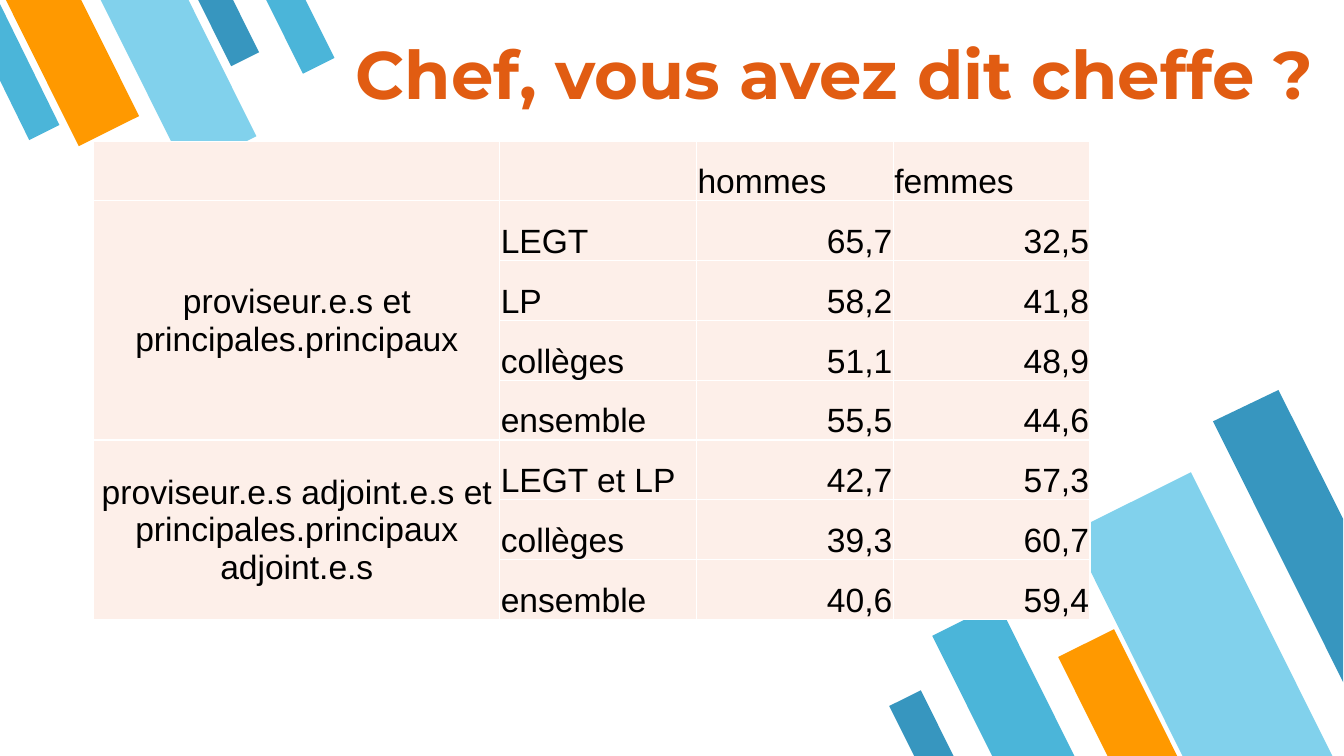
from dataclasses import dataclass

from lxml.etree import SubElement
from pptx import Presentation
from pptx.dml.color import RGBColor
from pptx.enum.shapes import MSO_SHAPE
from pptx.enum.text import MSO_ANCHOR, PP_ALIGN
from pptx.oxml import parse_xml
from pptx.oxml.ns import nsdecls, qn
from pptx.util import Pt

SKY, PALE, DEEP, GOLD = "4BB5D9", "81D1EC", "3796BF", "FF9900"
WHITE, BLACK, ROSE, RUST = "FFFFFF", "000000", "FDEFE9", "E15C12"
LOW, HIGH = 153.5, 333.5


@dataclass
class Bar:
    left: float
    top: float
    width: float
    height: float
    turn: float
    color: str


@dataclass
class Patch:
    points: list[tuple[float, float]]
    color: str


@dataclass
class Block:
    label: str
    rows: list[tuple[str, str, str]]


BARS = [
    Bar(692.6, 435.6, 52.6, 130.3, LOW, SKY),
    Bar(812.9, 346.3, 95.8, 235.4, LOW, PALE),
    Bar(778.3, 453.6, 44.6, 109.4, LOW, GOLD),
    Bar(648, 495.4, 25.2, 61.9, LOW, DEEP),
    Bar(151.2, -12.2, 22.3, 57.6, HIGH, DEEP),
    Bar(26.6, -21.6, 48.2, 121.7, HIGH, GOLD),
    Bar(98.6, -23.8, 56.2, 141.1, HIGH, PALE),
    Bar(200.9, -13.7, 25.2, 64.1, HIGH, SKY),
]
PATCHES = [
    Patch([(913.7, 278.6), (866.9, 301), (960, 487.4), (960, 370.8)], DEEP),
    Patch([(20.9, 100.1), (42.5, 89.3), (0, 2.9), (0, 57.6)], SKY),
]
HEAD = ("hommes", "femmes")
BLOCKS = [
    Block("proviseur.e.s et principales.principaux", [
        ("LEGT", "65,7", "32,5"),
        ("LP", "58,2", "41,8"),
        ("collèges", "51,1", "48,9"),
        ("ensemble", "55,5", "44,6"),
    ]),
    Block("proviseur.e.s adjoint.e.s et principales.principaux adjoint.e.s", [
        ("LEGT et LP", "42,7", "57,3"),
        ("collèges", "39,3", "60,7"),
        ("ensemble", "40,6", "59,4"),
    ]),
]
COLS = (290.2, 140.6, 140.6, 140.6)
ROW = 42.7


def rgb(code: str) -> RGBColor:
    return RGBColor.from_string(code)


def paint(shape, color: str) -> None:
    shape.shadow.inherit = False
    shape.fill.solid()
    shape.fill.fore_color.rgb = rgb(color)
    shape.line.fill.background()


def draw_bar(slide, bar: Bar) -> None:
    shape = slide.shapes.add_shape(
        MSO_SHAPE.FLOWCHART_MANUAL_INPUT,
        Pt(bar.left), Pt(bar.top), Pt(bar.width), Pt(bar.height))
    shape.rotation = bar.turn
    shape.element.spPr.find(qn("a:xfrm")).set("flipH", "1")
    paint(shape, bar.color)


def draw_patch(slide, patch: Patch) -> None:
    spots = [(Pt(x), Pt(y)) for x, y in patch.points]
    form = slide.shapes.build_freeform(*spots[0])
    form.add_line_segments(spots[1:], close=True)
    paint(form.convert_to_shape(), patch.color)


def add_run(para, text: str, font: str, size: float, color: str,
            bold: bool = False) -> None:
    run = para.add_run()
    run.text = text
    run.font.name = font
    run.font.size = Pt(size)
    run.font.bold = bold
    run.font.color.rgb = rgb(color)


def draw_title(slide, text: str) -> None:
    box = slide.shapes.add_textbox(Pt(237.6), Pt(10.8), Pt(717.8), Pt(90))
    frame = box.text_frame
    frame.word_wrap = True
    frame.vertical_anchor = MSO_ANCHOR.MIDDLE
    frame.margin_left = frame.margin_right = Pt(0)
    frame.margin_top = frame.margin_bottom = Pt(0)
    para = frame.paragraphs[0]
    para.alignment = PP_ALIGN.CENTER
    para.line_spacing = 0.9
    add_run(para, text, "Montserrat", 48, RUST, True)


def style_cell(cell) -> None:
    cell.fill.solid()
    cell.fill.fore_color.rgb = rgb(ROSE)
    cell.margin_left = cell.margin_right = cell.margin_top = Pt(0.75)
    cell.margin_bottom = Pt(0)
    # Borders come before the fill in the cell properties
    props = cell._tc.get_or_add_tcPr()
    for spot, side in enumerate(("lnL", "lnR", "lnT", "lnB")):
        line = parse_xml(f'<a:{side} {nsdecls("a")} w="{Pt(1)}"/>')
        fill = SubElement(line, qn("a:solidFill"))
        SubElement(fill, qn("a:srgbClr"), val=WHITE)
        props.insert(spot, line)


def write_cell(cell, text: str, align=PP_ALIGN.LEFT,
               anchor=MSO_ANCHOR.BOTTOM) -> None:
    cell.vertical_anchor = anchor
    para = cell.text_frame.paragraphs[0]
    para.alignment = align
    add_run(para, text, "Arial", 24, BLACK)


def draw_table(slide, blocks: list[Block]) -> None:
    count = 1 + sum(len(block.rows) for block in blocks)
    table = slide.shapes.add_table(
        count, len(COLS), Pt(67), Pt(100.8),
        Pt(sum(COLS)), Pt(ROW * count)).table
    table.first_row = table.horz_banding = False
    for col, width in zip(table.columns, COLS):
        col.width = Pt(width)
    for row in table.rows:
        row.height = Pt(ROW)
    for cell in table.iter_cells():
        style_cell(cell)

    # Header
    for col, text in enumerate(HEAD, 2):
        write_cell(table.cell(0, col), text)

    # Blocks with a merged label
    top = 1
    for block in blocks:
        label = table.cell(top, 0)
        label.merge(table.cell(top + len(block.rows) - 1, 0))
        write_cell(label, block.label, PP_ALIGN.CENTER, MSO_ANCHOR.MIDDLE)
        for row, (name, *shares) in enumerate(block.rows, top):
            write_cell(table.cell(row, 1), name)
            for col, share in enumerate(shares, 2):
                write_cell(table.cell(row, col), share, PP_ALIGN.RIGHT)
        top += len(block.rows)


def main() -> None:
    deck = Presentation()
    deck.slide_width, deck.slide_height = Pt(960.5), Pt(540)
    slide = deck.slides.add_slide(deck.slide_layouts[6])

    # Corner stripes
    for bar in BARS:
        draw_bar(slide, bar)
    for patch in PATCHES:
        draw_patch(slide, patch)

    # Content
    draw_title(slide, "Chef, vous avez dit cheffe ?")
    draw_table(slide, BLOCKS)
    deck.save("out.pptx")


if __name__ == "__main__":
    main()
